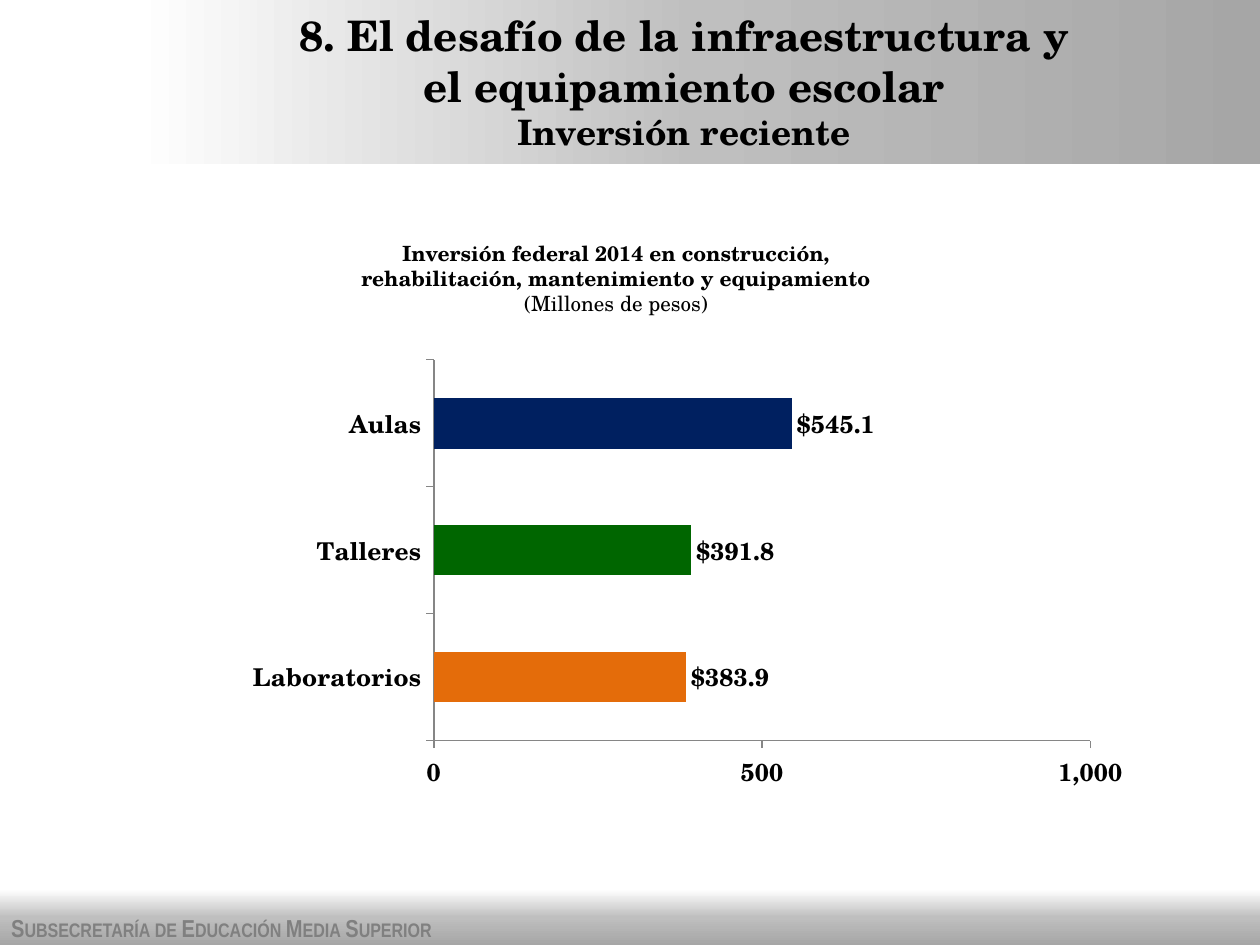
from copy import deepcopy
from typing import NamedTuple

from lxml.etree import SubElement as Sub
from pptx import Presentation
from pptx.chart.data import CategoryChartData as ChartData
from pptx.dml.color import RGBColor as Rgb
from pptx.enum.chart import XL_CHART_TYPE as Kind, XL_LABEL_POSITION as Place
from pptx.enum.chart import XL_TICK_MARK as Tick
from pptx.enum.shapes import MSO_SHAPE as Form
from pptx.enum.text import MSO_ANCHOR as Anchor, MSO_AUTO_SIZE as Fit, PP_ALIGN as Align
from pptx.oxml.ns import qn
from pptx.util import Inches, Pt

SERIF = "TeX Gyre Schola"
BLACK = "000000"
GRAY = "868686"


class Box(NamedTuple):
    x: float
    y: float
    w: float
    h: float


class Band(NamedTuple):
    box: Box
    angle: int


class Line(NamedTuple):
    text: str
    size: int
    bold: bool = True
    font: str = SERIF
    color: str = BLACK
    align: Align = Align.CENTER


class Bar(NamedTuple):
    name: str
    value: float
    color: str


BANDS = [Band(Box(0, 7.06, 10, 0.44), 270), Band(Box(1.06, 0, 8.94, 1.3), 0)]
STOPS = [(0, "FFFFFF"), (0.5, "BFBFBF"), (1, "A6A6A6")]
FOOT = [Line("Subsecretaría de Educación Media Superior", 14, True,
             "Arial Narrow", "808080", Align.LEFT)]
HEAD = [Line("8. El desafío de la infraestructura y", 24),
        Line("el equipamiento escolar", 24),
        Line("Inversión reciente", 20)]
NOTE = [Line("Inversión federal 2014 en construcción, rehabilitación, "
             "mantenimiento y equipamiento", 12),
        Line("(Millones de pesos)", 12, False)]
BARS = [Bar("Laboratorios", 383.9, "E46C0A"),
        Bar("Talleres", 391.8, "006600"),
        Bar("Aulas", 545.1, "002060")]
PLOT = Box(0.257, 0.129, 0.675, 0.743)


def rgb(code: str) -> Rgb:
    """Turn a hex string into a colour."""
    return Rgb.from_string(code)


def span(box: Box) -> list:
    """Give the box in slide lengths."""
    return [Inches(side) for side in box]


def style(font, size: int, name: str, color: str, bold: bool) -> None:
    """Set size, face, colour and weight of a font."""
    font.size, font.name, font.bold = Pt(size), name, bold
    font.color.rgb = rgb(color)


def draw_band(slide, band: Band) -> None:
    """Draw a rectangle with the gray gradient."""
    shape = slide.shapes.add_shape(Form.RECTANGLE, *span(band.box))
    shape.shadow.inherit = False
    shape.line.fill.background()
    fill = shape.fill
    fill.gradient()
    fill.gradient_angle = band.angle
    stops = next(shape._element.iter(qn("a:gsLst")))
    stops.append(deepcopy(stops[0]))
    for stop, (place, code) in zip(fill.gradient_stops, STOPS):
        stop.position = place
        stop.color.rgb = rgb(code)


def write(frame, lines: list[Line]) -> None:
    """Write one styled paragraph for each line."""
    frame.word_wrap = True
    for i, line in enumerate(lines):
        para = frame.add_paragraph() if i else frame.paragraphs[0]
        para.alignment = line.align
        run = para.add_run()
        run.text = line.text
        style(run.font, line.size, line.font, line.color, line.bold)


def add_text(slide, box: Box, lines: list[Line]):
    """Add a text box and return its frame."""
    frame = slide.shapes.add_textbox(*span(box)).text_frame
    write(frame, lines)
    return frame


def set_plot(chart, box: Box) -> None:
    """Fix the inner plot area as shares of the chart."""
    area = chart._chartSpace.chart.plotArea
    for old in area.findall(qn("c:layout")):
        area.remove(old)
    lay = area.makeelement(qn("c:layout"))
    area.insert(0, lay)
    hand = Sub(lay, qn("c:manualLayout"))
    rules = [("layoutTarget", "inner"), ("xMode", "edge"), ("yMode", "edge")]
    for tag, value in rules + list(zip("xywh", box)):
        Sub(hand, qn(f"c:{tag}")).set("val", str(value))


def add_bars(slide, box: Box, bars: list[Bar]) -> None:
    """Add the bar chart of spending."""
    data = ChartData()
    data.categories = [bar.name for bar in bars]
    data.add_series("Series 1", [bar.value for bar in bars])
    chart = slide.shapes.add_chart(Kind.BAR_CLUSTERED, *span(box), data).chart
    chart.has_legend = chart.has_title = False
    style(chart.font, 14, SERIF, BLACK, True)
    set_plot(chart, PLOT)

    for axis in (chart.category_axis, chart.value_axis):
        axis.has_major_gridlines = False
        axis.major_tick_mark, axis.minor_tick_mark = Tick.OUTSIDE, Tick.NONE
        axis.format.line.color.rgb = rgb(GRAY)
        axis.format.line.width = Pt(0.75)
    scale = chart.value_axis
    scale.minimum_scale, scale.maximum_scale, scale.major_unit = 0, 1000, 500
    scale.tick_labels.number_format = "#,##0"
    scale.tick_labels.number_format_is_linked = False

    plot = chart.plots[0]
    plot.gap_width, plot.vary_by_categories = 150, False
    row = plot.series[0]
    row.format.fill.solid()
    row.format.fill.fore_color.rgb = rgb("C3D69B")
    for i, bar in enumerate(bars):
        fill = row.points[i].format.fill
        fill.solid()
        fill.fore_color.rgb = rgb(bar.color)
    tags = row.data_labels
    tags.show_value = True
    tags.position = Place.OUTSIDE_END
    tags.number_format, tags.number_format_is_linked = '"$"#,##0.0', False


def main() -> None:
    """Build and save the slide."""
    deck = Presentation()
    deck.slide_width, deck.slide_height = Inches(10), Inches(7.5)
    slide = deck.slides.add_slide(deck.slide_layouts[5])
    for band in BANDS:
        draw_band(slide, band)
    foot = add_text(slide, Box(-0.01, 7.2, 6.46, 0.34), FOOT)
    foot.paragraphs[0].runs[0].font._element.set("cap", "small")
    add_bars(slide, Box(1.46, 2.33, 7.72, 4.07), BARS)
    add_text(slide, Box(2.64, 1.86, 4.5, 0.71), NOTE)

    title = slide.shapes.title
    title.left, title.top, title.width, title.height = span(Box(1.14, 0.03, 8.58, 1.23))
    title.text_frame.auto_size = Fit.NONE
    title.text_frame.vertical_anchor = Anchor.MIDDLE
    write(title.text_frame, HEAD)
    slide.shapes._spTree.append(title._element)
    deck.save("out.pptx")


if __name__ == "__main__":
    main()
